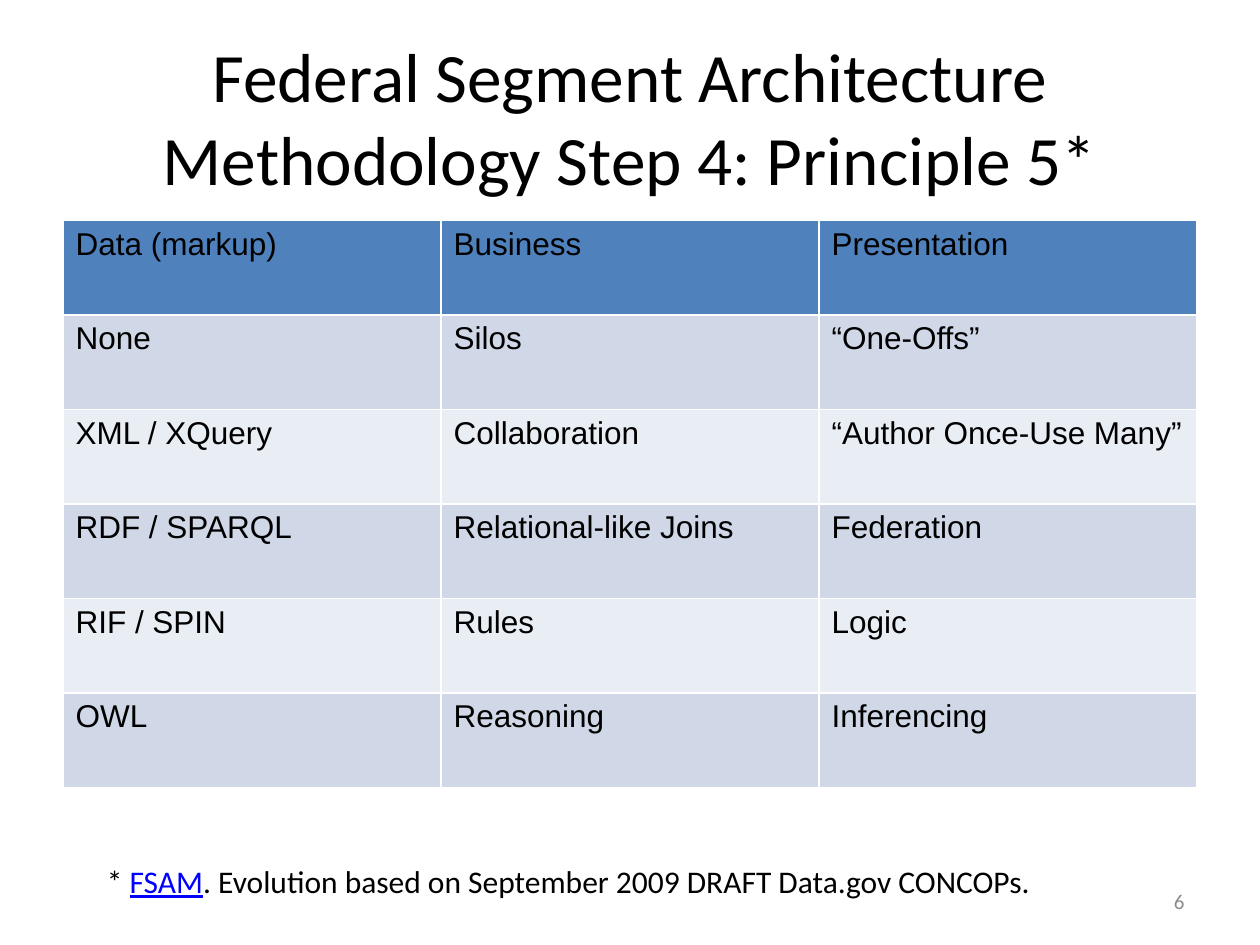
import pptx
import pptx.dml.color
import pptx.enum.text
import pptx.util

Inches = pptx.util.Inches
ALIGN = pptx.enum.text.PP_ALIGN
ANCHOR = pptx.enum.text.MSO_ANCHOR

COLORS = {
    "text": "000000",
    "link": "0000FF",
    "number": "8C8C8C",
    "header": "4F81BD",
    "odd_row": "D0D8E8",
    "even_row": "E9EDF4",
}

MATURITY_ROWS = [
    ("Data (markup)", "Business", "Presentation"),
    ("None", "Silos", "“One-Offs”"),
    ("XML / XQuery", "Collaboration", "“Author Once-Use Many”"),
    ("RDF / SPARQL", "Relational-like Joins", "Federation"),
    ("RIF / SPIN", "Rules", "Logic"),
    ("OWL", "Reasoning", "Inferencing"),
]


class SlideBuilder:
    text_font = "Calibri"
    table_font = "Arial"
    body_size = 18

    def __init__(self, slide):
        self.slide = slide

    def color(self, name):
        return pptx.dml.color.RGBColor.from_string(COLORS[name])

    def style(self, font, name, size, color):
        font.name = name
        font.size = pptx.util.Pt(size)
        font.color.rgb = self.color(color)

    def text(self, box, runs, size=body_size, color="text",
             align=ALIGN.LEFT, anchor=ANCHOR.TOP, wrap=True):
        shape = self.slide.shapes.add_textbox(*map(Inches, box))
        frame = shape.text_frame
        frame.word_wrap = wrap
        frame.vertical_anchor = anchor
        paragraph = frame.paragraphs[0]
        paragraph.alignment = align
        self.style(paragraph.font, self.text_font, size, color)
        for content, linked in runs:
            run = paragraph.add_run()
            run.text = content
            if linked:
                run.font.underline = True
                run.font.color.rgb = self.color("link")

    def table(self, box, rows):
        shape = self.slide.shapes.add_table(
            len(rows), len(rows[0]), *map(Inches, box))
        for row_index, row in enumerate(rows):
            band = "odd_row" if row_index % 2 else "even_row"
            fill = band if row_index else "header"
            for column_index, content in enumerate(row):
                cell = shape.table.cell(row_index, column_index)
                cell.text = content
                cell.fill.solid()
                cell.fill.fore_color.rgb = self.color(fill)
                font = cell.text_frame.paragraphs[0].font
                self.style(font, self.table_font, self.body_size, "text")
                font.bold = False


def main():
    presentation = pptx.Presentation()
    presentation.slide_width = Inches(10)
    presentation.slide_height = Inches(7.5)
    slide = presentation.slides.add_slide(presentation.slide_layouts[6])
    builder = SlideBuilder(slide)

    builder.text(
        (0.5, 0.3, 9, 1.25),
        [("Federal Segment Architecture Methodology Step 4: Principle 5*", False)],
        size=39.6, align=ALIGN.CENTER, anchor=ANCHOR.MIDDLE)
    builder.table((0.5, 1.75, 9, 4.5), MATURITY_ROWS)
    builder.text(
        (0.75, 6.79, 7.57, 0.4),
        [("* ", False), ("FSAM", True),
         (". Evolution based on September 2009 DRAFT Data.gov CONCOPs.", False)],
        wrap=False)
    builder.text(
        (7.17, 6.95, 2.33, 0.4), [("6", False)], size=12, color="number",
        align=ALIGN.RIGHT, anchor=ANCHOR.MIDDLE)

    presentation.save("out.pptx")


if __name__ == "__main__":
    main()
